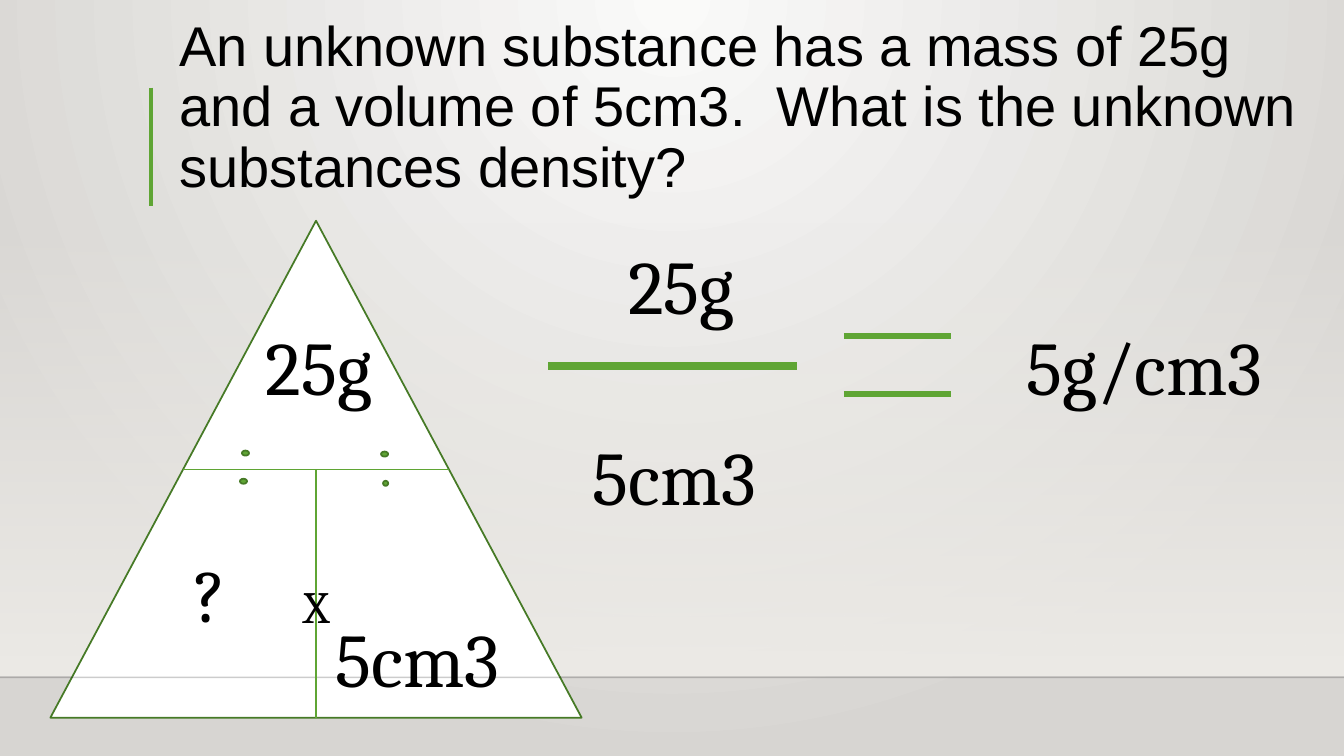
from lxml import etree
from pptx import Presentation, util as u
from pptx.dml.color import RGBColor
from pptx.enum import shapes, text
from pptx.oxml import ns

GREEN = RGBColor(0x5F, 0xA5, 0x34)
DARK_GREEN = RGBColor(0x46, 0x7A, 0x26)
BLACK = RGBColor(0, 0, 0)
FLOOR_EDGE = RGBColor(0, 0, 1)
WHITE = RGBColor(0xFF, 0xFF, 0xFF)
LIGHT = RGBColor(0xFA, 0xFA, 0xF9)
GREY = RGBColor(0xD7, 0xD5, 0xD2)
WALL = RGBColor(0xED, 0xEB, 0xE7)

deck = Presentation()
deck.slide_width, deck.slide_height = u.Inches(13.33), u.Inches(7.5)
page = deck.slides.add_slide(deck.slide_layouts[5])


def place(left, top, width, height):
    """Turn percentages of the slide's width and height into lengths."""
    across, down = deck.slide_width / 100, deck.slide_height / 100
    return [u.Emu(round(n)) for n in
            (left * across, top * down, width * across, height * down)]


def write(box, words, size=54, font="Cambria", align=text.PP_ALIGN.CENTER,
          anchor=text.MSO_ANCHOR.TOP, wrap=False, spacing=1.0):
    frame = box.text_frame
    frame.auto_size = text.MSO_AUTO_SIZE.NONE
    frame.word_wrap, frame.vertical_anchor = wrap, anchor
    para = frame.paragraphs[0]
    para.alignment, para.line_spacing = align, spacing
    span = para.add_run()
    span.text = words
    span.font.size, span.font.name = u.Pt(size), font
    span.font.color.rgb = BLACK


# Backdrop: round glow behind a wall that fades in towards the floor
wall = page.shapes.add_shape(shapes.MSO_SHAPE.RECTANGLE, *place(0, 29.33, 100, 60))
wall.shadow.inherit = False
wall.line.fill.background()
for fill, colours in ((page.background.fill, (LIGHT, GREY)), (wall.fill, (WALL, WALL))):
    fill.gradient()
    fill.gradient_angle = 270
    for stop, colour, position in zip(fill.gradient_stops, colours, (0, 1)):
        stop.color.rgb, stop.position = colour, position

clear_stop = wall.element.find(".//" + ns.qn("a:gs")).find(ns.qn("a:srgbClr"))
etree.SubElement(clear_stop, ns.qn("a:alpha"), val="0")

glow = page.element.find(".//" + ns.qn("p:bg")).find(".//" + ns.qn("a:gradFill"))
glow.remove(glow.find(ns.qn("a:lin")))
circle = etree.SubElement(glow, ns.qn("a:path"), {"path": "circle"})
etree.SubElement(circle, ns.qn("a:fillToRect"), l="43000", t="0", r="43000", b="100000")

title = page.shapes.title
title.left, title.top, title.width, title.height = place(12.6, 2.13, 86.57, 24.93)
write(title, "An unknown substance has a mass of 25g and a volume of 5cm3.  "
      "What is the unknown substances density?", size=40, font="Arial",
      align=text.PP_ALIGN.LEFT, anchor=text.MSO_ANCHOR.BOTTOM, wrap=True, spacing=0.9)

# Formula triangle and the dots of its division signs
left, top, width, height = 3.75, 29.2, 39.53, 65.73
centre, middle = left + width / 2, top + height / 2
outlines = [(shapes.MSO_SHAPE.ISOSCELES_TRIANGLE, WHITE, (left, top, width, height))]
for dot_left, dot_top, dot_width in ((18, 59.6, 0.53), (17.85, 63.33, 0.53),
                                     (28.35, 59.73, 0.53), (28.5, 63.6, 0.38)):
    outlines.append((shapes.MSO_SHAPE.OVAL, GREEN, (dot_left, dot_top, dot_width, 0.67)))
for kind, colour, area in outlines:
    shape = page.shapes.add_shape(kind, *place(*area))
    shape.shadow.inherit = False
    shape.fill.solid()
    shape.fill.fore_color.rgb = colour
    shape.line.color.rgb, shape.line.width = DARK_GREEN, u.Pt(1.25)

# Start, extent, weight and colour of every straight line
rules = [
    (0, 89.6, 100, 0, 1, FLOOR_EDGE),
    (11.25, 11.6, 0, 15.6, 3, GREEN),
    (left + width / 4, middle, width / 2, 0, 0.75, GREEN),
    (centre, middle, 0, height / 2, 0.75, GREEN),
    (40.8, 48.4, 18.53, 0, 6, GREEN),
    (62.78, 44.4, 7.95, 0, 4.5, GREEN),
    (62.78, 52.13, 7.95, 0, 4.5, GREEN),
]
for x, y, across, down, weight, colour in rules:
    start_x, start_y, run, drop = place(x, y, across, down)
    rule = page.shapes.add_connector(shapes.MSO_CONNECTOR.STRAIGHT, start_x, start_y,
                                     start_x + run, start_y + drop)
    rule.line.color.rgb, rule.line.width = colour, u.Pt(weight)
    properties = rule.element.find(ns.qn("p:spPr"))
    etree.SubElement(properties, ns.qn("a:effectLst"))
    if colour == FLOOR_EDGE:
        tint = properties.find(".//" + ns.qn("a:srgbClr"))
        etree.SubElement(tint, ns.qn("a:alpha"), val="20000")

# Values in the triangle, then the worked fraction and its answer
for words, x, y, across, size in (
        ("X", 21.65, 75.87, 3.75, 32), ("25g", 18.53, 41.6, 10.35, 54),
        ("5cm3", 23.7, 80.27, 14.7, 54), ("?", 13.65, 71.73, 4.05, 54),
        ("25g", 45.53, 30.93, 10.35, 54), ("5cm3", 42.83, 56.27, 14.7, 54),
        ("5g/cm3", 75.3, 41.6, 19.73, 54)):
    box = page.shapes.add_textbox(*place(x, y, across, size / 4))
    write(box, words, size=size)

deck.save("out.pptx")
